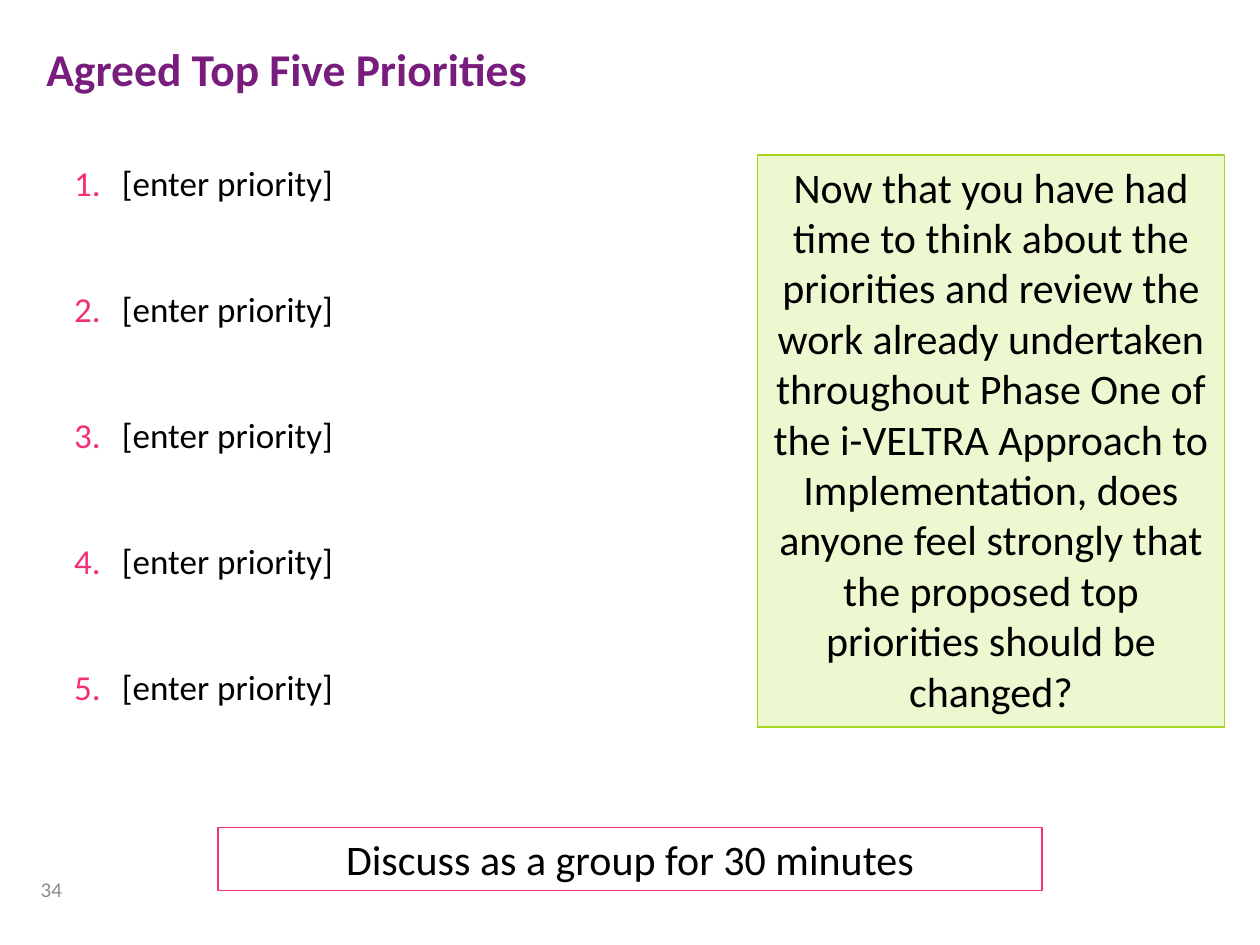
import pptx
import pptx.dml.color
import pptx.enum.shapes
import pptx.enum.text
import pptx.oxml
import pptx.oxml.ns
import pptx.util
from pptx.util import Inches

RGBColor = pptx.dml.color.RGBColor
ALIGN = pptx.enum.text.PP_ALIGN
ANCHOR = pptx.enum.text.MSO_ANCHOR

PURPLE = RGBColor(0x78, 0x1D, 0x7D)
PINK = RGBColor(0xF3, 0x2F, 0x79)
GREEN = RGBColor(0xA4, 0xD6, 0x20)
PALE_GREEN = RGBColor(0xED, 0xF8, 0xD1)
GREY = RGBColor(0x8C, 0x8C, 0x8C)
BLACK = RGBColor(0, 0, 0)

FONT = "Calibri"
PRIORITY_COUNT = 5
QUESTION = (
    "Now that you have had time to think about the priorities and review the "
    "work already undertaken throughout Phase One of the i-VELTRA Approach to "
    "Implementation, does anyone feel strongly that the proposed top "
    "priorities should be changed?"
)


def write_text(shape, lines, size, color=BLACK, bold=False,
               alignment=ALIGN.LEFT, anchor=ANCHOR.TOP):
    """Fill a shape with one formatted paragraph per line."""
    frame = shape.text_frame
    frame.word_wrap = True
    frame.vertical_anchor = anchor
    frame.text = "\n".join(lines)
    font_format = {"name": FONT, "size": pptx.util.Pt(size), "bold": bold}
    for paragraph in frame.paragraphs:
        paragraph.alignment = alignment
        for name, value in font_format.items():
            setattr(paragraph.runs[0].font, name, value)
        paragraph.runs[0].font.color.rgb = color
    return frame


def add_text(slide, box, lines, size, **text_format):
    shape = slide.shapes.add_textbox(*map(Inches, box))
    return write_text(shape, lines, size, **text_format)


def add_callout(slide, box, text, line_color, fill_color=None):
    """Add an outlined rectangle with centred text."""
    shape = slide.shapes.add_shape(
        pptx.enum.shapes.MSO_SHAPE.RECTANGLE, *map(Inches, box))
    shape.shadow.inherit = False
    if fill_color is None:
        shape.fill.background()
    else:
        shape.fill.solid()
        shape.fill.fore_color.rgb = fill_color
    shape.line.color.rgb = line_color
    shape.line.width = pptx.util.Pt(0.75)
    write_text(shape, [text], 24, alignment=ALIGN.CENTER)


def number_paragraph(paragraph, color):
    """Give a paragraph a coloured automatic number and a hanging indent."""
    indent = Inches(0.38)
    properties = paragraph._p.get_or_add_pPr()
    properties.set("marL", str(indent))
    properties.set("indent", str(-indent))
    namespace = pptx.oxml.ns.nsdecls("a")
    for xml in (
        f'<a:buClr {namespace}><a:srgbClr val="{color}"/></a:buClr>',
        f'<a:buFont {namespace} typeface="+mj-lt"/>',
        f'<a:buAutoNum {namespace} type="arabicPeriod"/>',
    ):
        properties.append(pptx.oxml.parse_xml(xml))


def add_numbered_list(slide, box, lines, size, gap):
    frame = add_text(slide, box, lines, size)
    for index, paragraph in enumerate(frame.paragraphs):
        if index:
            paragraph.space_before = pptx.util.Pt(gap)
        number_paragraph(paragraph, PINK)


def main():
    presentation = pptx.Presentation()
    presentation.slide_width = Inches(10)
    presentation.slide_height = Inches(7.5)
    slide = presentation.slides.add_slide(presentation.slide_layouts[6])

    # Slide number and title
    add_text(slide, (0.12, 6.86, 0.47, 0.4), ["34"], 12, color=GREY,
             alignment=ALIGN.RIGHT, anchor=ANCHOR.MIDDLE)
    add_text(slide, (0.27, 0.28, 9.45, 0.63), ["Agreed Top Five Priorities"],
             26, color=PURPLE, bold=True)

    # Priorities, one inch apart
    add_numbered_list(slide, (0.49, 1.23, 5.9, 4.78),
                      ["[enter priority]"] * PRIORITY_COUNT, 20, gap=48)

    # Question and group task
    add_callout(slide, (6.01, 1.23, 3.71, 4.54), QUESTION, GREEN, PALE_GREEN)
    add_callout(slide, (1.73, 6.57, 6.54, 0.5),
                "Discuss as a group for 30 minutes", PINK)

    presentation.save("out.pptx")


if __name__ == "__main__":
    main()
